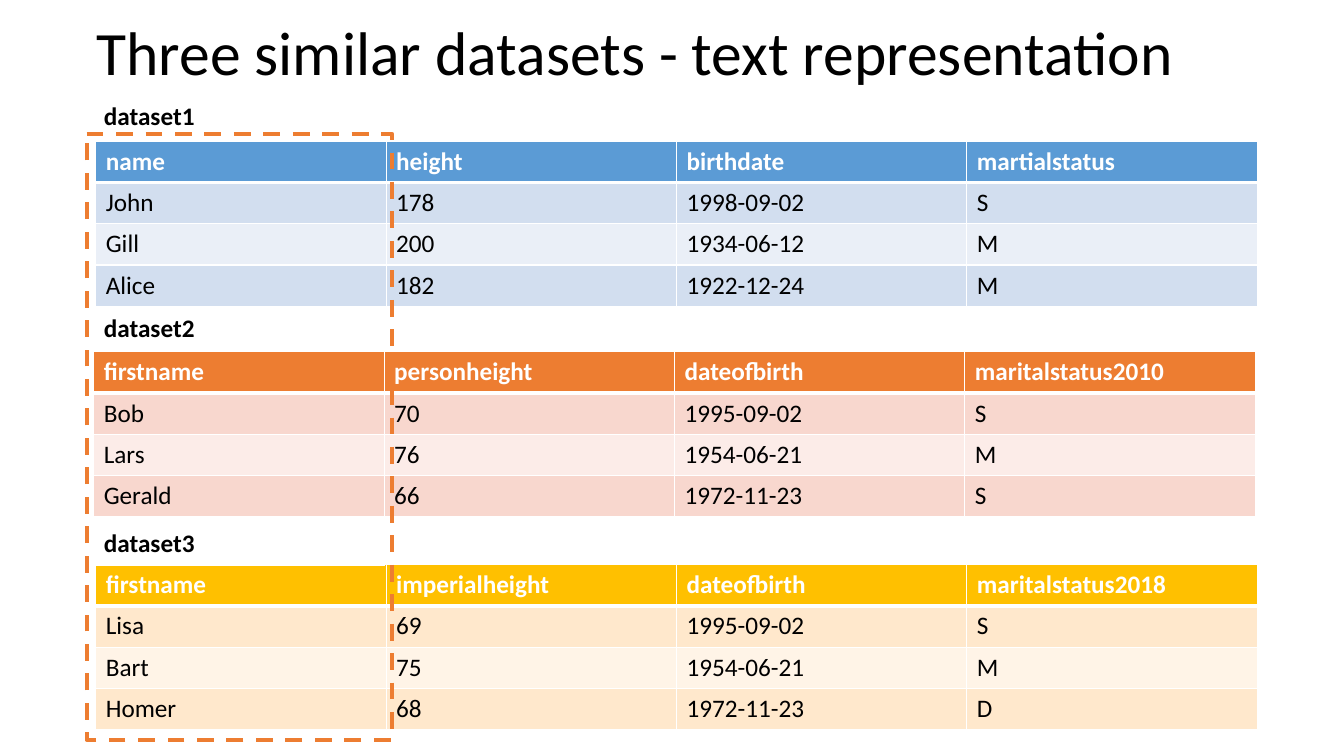
import dataclasses

import pptx
import pptx.dml.color
import pptx.enum.dml
import pptx.enum.shapes
import pptx.enum.text
import pptx.oxml
import pptx.oxml.ns
import pptx.util

Inches = pptx.util.Inches
Pt = pptx.util.Pt
RGBColor = pptx.dml.color.RGBColor

WHITE = RGBColor(0xFF, 0xFF, 0xFF)
BLACK = RGBColor(0x00, 0x00, 0x00)
BLUE = RGBColor(0x5B, 0x9B, 0xD5)
BLUE_MID = RGBColor(0xD2, 0xDE, 0xEF)
BLUE_PALE = RGBColor(0xEA, 0xEF, 0xF7)
ORANGE = RGBColor(0xED, 0x7D, 0x31)
ORANGE_MID = RGBColor(0xF8, 0xD7, 0xCE)
ORANGE_PALE = RGBColor(0xFC, 0xEC, 0xE8)
GOLD = RGBColor(0xFF, 0xC0, 0x00)
GOLD_MID = RGBColor(0xFF, 0xE8, 0xCC)
GOLD_PALE = RGBColor(0xFF, 0xF4, 0xE7)

FONT = "Calibri"
LEFT = 0.93
COL = 2.88
ROW = 0.41


@dataclasses.dataclass
class Dataset:
    label: str
    label_top: float
    left: float
    top: float
    head: RGBColor
    bands: tuple[RGBColor, RGBColor]
    rows: list[list[str]]


DATASETS = [
    Dataset("dataset1", 0.96, 0.95, 1.4, BLUE, (BLUE_MID, BLUE_PALE), [
        ["name", "height", "birthdate", "martialstatus"],
        ["John", "178", "1998-09-02", "S"],
        ["Gill", "200", "1934-06-12", "M"],
        ["Alice", "182", "1922-12-24", "M"],
    ]),
    Dataset("dataset2", 3.06, 0.93, 3.49, ORANGE, (ORANGE_MID, ORANGE_PALE), [
        ["firstname", "personheight", "dateofbirth", "maritalstatus2010"],
        ["Bob", "70", "1995-09-02", "S"],
        ["Lars", "76", "1954-06-21", "M"],
        ["Gerald", "66", "1972-11-23", "S"],
    ]),
    Dataset("dataset3", 5.19, 0.95, 5.6, GOLD, (GOLD_MID, GOLD_PALE), [
        ["firstname", "imperialheight", "dateofbirth", "maritalstatus2018"],
        ["Lisa", "69", "1995-09-02", "S"],
        ["Bart", "75", "1954-06-21", "M"],
        ["Homer", "68", "1972-11-23", "D"],
    ]),
]


def write(frame, text: str, *, size: float = 18, color: RGBColor = BLACK,
          bold: bool = False, spacing: float = 1.0) -> None:
    para = frame.paragraphs[0]
    para.line_spacing = spacing
    run = para.add_run()
    run.text = text
    run.font.name = FONT
    run.font.size = Pt(size)
    run.font.bold = bold
    run.font.color.rgb = color


def edge(cell, base: float) -> None:
    """Give a cell white borders, the bottom one of its own width."""
    props = cell._tc.get_or_add_tcPr()
    for side, width in (("L", 1), ("R", 1), ("T", 1), ("B", base)):
        props.append(pptx.oxml.parse_xml(
            f'<a:ln{side} {pptx.oxml.ns.nsdecls("a")} w="{Pt(width)}">'
            f'<a:solidFill><a:srgbClr val="{WHITE}"/></a:solidFill>'
            f'</a:ln{side}>'))


def grid(slide, left: float, top: float, rows: list[list[str]],
         head: RGBColor | None = None,
         bands: tuple[RGBColor, ...] = ()) -> None:
    """Draw a table; without a head colour its cells stay clear."""
    count = len(rows[0])
    table = slide.shapes.add_table(
        len(rows), count, Inches(left), Inches(top),
        Inches(COL * count), Inches(ROW * len(rows))).table
    table.first_row = False
    table.horz_banding = False
    for column in table.columns:
        column.width = Inches(COL)
    for i, row in enumerate(rows):
        table.rows[i].height = Inches(ROW)
        for j, text in enumerate(row):
            cell = table.cell(i, j)
            edge(cell, 3 if i == 0 else 1)
            if head is None:
                cell.fill.background()
            else:
                cell.fill.solid()
                cell.fill.fore_color.rgb = bands[(i - 1) % 2] if i else head
            write(cell.text_frame, text, bold=i == 0,
                  color=WHITE if head and i == 0 else BLACK)


def title(slide, text: str) -> None:
    box = slide.shapes.add_textbox(
        Inches(0.86), Inches(-0.17), Inches(11.5), Inches(1.45))
    box.text_frame.word_wrap = True
    box.text_frame.vertical_anchor = pptx.enum.text.MSO_ANCHOR.MIDDLE
    write(box.text_frame, text, size=44, spacing=0.9)


def frame(slide) -> None:
    """Outline the first column of all datasets."""
    box = slide.shapes.add_shape(
        pptx.enum.shapes.MSO_SHAPE.ROUNDED_RECTANGLE,
        Inches(0.86), Inches(1.33), Inches(3.03), Inches(6.01))
    box.adjustments[0] = 0
    box.shadow.inherit = False
    box.fill.background()
    box.line.color.rgb = ORANGE
    box.line.width = Pt(3)
    box.line.dash_style = pptx.enum.dml.MSO_LINE.DASH


def main() -> None:
    deck = pptx.Presentation()
    deck.slide_width = Inches(13.33)
    deck.slide_height = Inches(7.5)
    slide = deck.slides.add_slide(deck.slide_layouts[6])

    # Title
    title(slide, "Three similar datasets - text representation")

    # Datasets with their labels
    for data in DATASETS:
        grid(slide, data.left, data.top, data.rows, data.head, data.bands)
        grid(slide, LEFT, data.label_top, [[data.label]])

    # Dashed frame
    frame(slide)

    deck.save("out.pptx")


if __name__ == "__main__":
    main()
